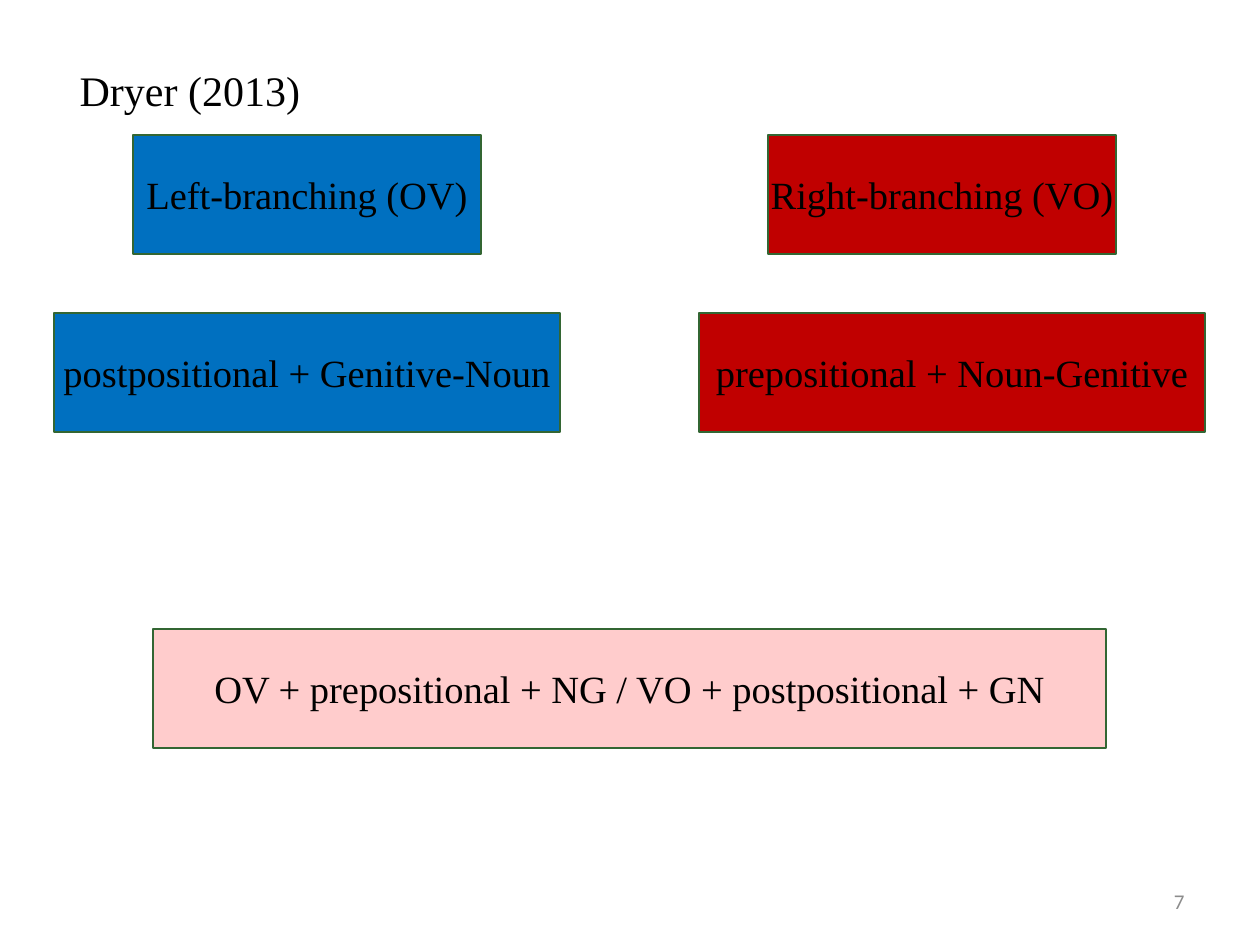
from pptx import Presentation
from pptx.dml.color import RGBColor
from pptx.enum.shapes import MSO_SHAPE
from pptx.enum.text import MSO_ANCHOR, MSO_AUTO_SIZE, PP_ALIGN
from pptx.util import Emu, Pt

RECT = MSO_SHAPE.RECTANGLE
TOP, MIDDLE = MSO_ANCHOR.TOP, MSO_ANCHOR.MIDDLE
LEFT, CENTER, RIGHT = PP_ALIGN.LEFT, PP_ALIGN.CENTER, PP_ALIGN.RIGHT
FIT_SHAPE = MSO_AUTO_SIZE.SHAPE_TO_FIT_TEXT

COLORS = {
    "left": "0070C0",
    "right": "C00000",
    "mixed": "FFCCCC",
    "border": "336633",
    "text": "000000",
    "number": "8C8C8C",
}
SERIF, SANS = "Times New Roman", "Calibri"

TITLE = "Dryer (2013)"
PAGE_NUMBER = "7"
BOX_HEIGHT = 119
BOXES = [
    ("Left-branching (OV)", "left", 133, 135, 348),
    ("Right-branching (VO)", "right", 768, 135, 348),
    ("postpositional + Genitive-Noun", "left", 54, 313, 506),
    ("prepositional + Noun-Genitive", "right", 699, 313, 506),
    ("OV + prepositional + NG / VO + postpositional + GN", "mixed", 153, 629, 953),
]


def px(n):
    return Emu(round(n * 914400 / 126))


def rgb(name):
    return RGBColor.from_string(COLORS[name])


def write(shape, text, size, align, anchor, font=SERIF, color="text", wrap=False):
    tf = shape.text_frame
    tf.text = text
    tf.word_wrap = wrap
    tf.vertical_anchor = anchor
    p = tf.paragraphs[0]
    p.alignment = align
    p.font.size = Pt(size)
    p.font.name = font
    p.font.color.rgb = rgb(color)


def add_box(s, text, fill, x, y, width):
    sp = s.shapes.add_shape(RECT, px(x), px(y), px(width), px(BOX_HEIGHT))
    sp.shadow.inherit = False
    sp.fill.solid()
    sp.fill.fore_color.rgb = rgb(fill)
    sp.line.color.rgb = rgb("border")
    sp.line.width = Pt(0)
    write(sp, text, 22, CENTER, MIDDLE)


def main():
    prs = Presentation()
    prs.slide_width, prs.slide_height = px(1260), px(945)
    s = prs.slides.add_slide(prs.slide_layouts[5])

    title = s.shapes.title
    title.left, title.top, title.width, title.height = px(67), px(58), px(248), px(62)
    write(title, TITLE, 24, LEFT, TOP)
    title.text_frame.auto_size = FIT_SHAPE

    for box in BOXES:
        add_box(s, *box)

    number = s.shapes.add_textbox(px(903), px(876), px(294), px(50))
    write(number, PAGE_NUMBER, 12, RIGHT, MIDDLE, SANS, "number", True)

    prs.save("out.pptx")


if __name__ == "__main__":
    main()
